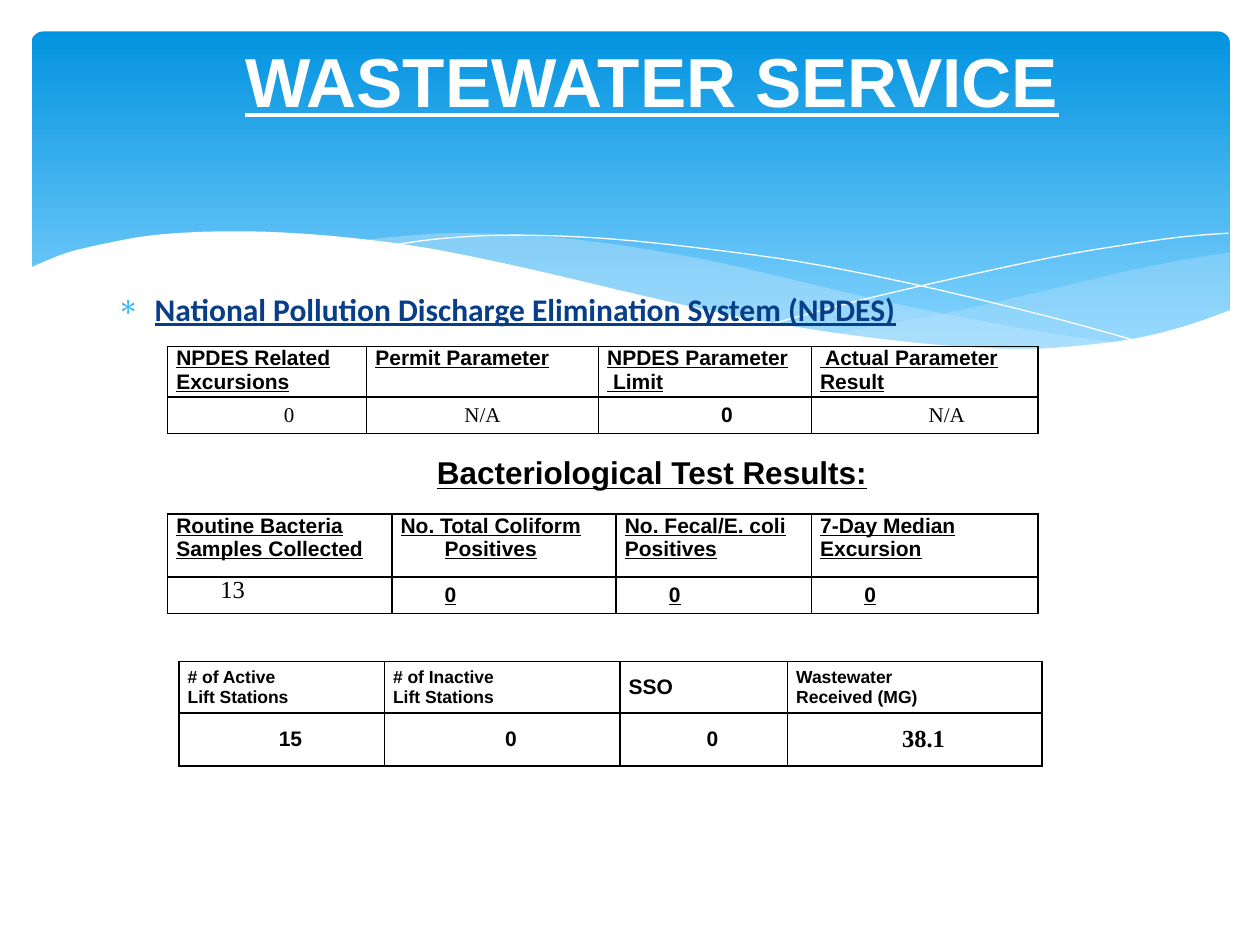
"""Build the wastewater service slide with its wave banner and three result tables."""
from lxml import etree
from pptx import Presentation
from pptx.dml.color import RGBColor
from pptx.enum.shapes import MSO_SHAPE
from pptx.enum.text import MSO_ANCHOR, PP_ALIGN
from pptx.oxml.ns import qn
from pptx.util import Cm, Pt

LEFT, CENTER = PP_ALIGN.LEFT, PP_ALIGN.CENTER
TOP, MIDDLE = MSO_ANCHOR.TOP, MSO_ANCHOR.MIDDLE
ROUNDED = MSO_SHAPE.ROUNDED_RECTANGLE
ARIAL, TIMES, CALIBRI = "Arial", "Times New Roman", "Calibri"

COLORS = {"white": "FFFFFF", "black": "000000", "navy": "073E87", "bullet": "31B6FD",
          "sky": "0293E0", "pale": "83D3FE", "wave": "C6E7FC"}

TITLE = "WASTEWATER SERVICE"
SUBJECT = "National Pollution Discharge Elimination System (NPDES)"
HEADING = "Bacteriological Test Results:"

STYLES = {
    "head": dict(under=True, anchor=TOP),
    "step": dict(under=True, anchor=TOP, indent=0.35),
    "plain": dict(font=TIMES, bold=False, align=CENTER, indent=0.35),
    "mid": dict(font=TIMES, bold=False, align=CENTER),
    "strong": dict(align=CENTER, indent=0.35),
    "count": dict(size=14, font=TIMES, bold=False, anchor=TOP, indent=0.35),
    "zero": dict(under=True, indent=0.35),
    "small": dict(size=10),
    "label": dict(),
    "total": dict(align=CENTER, margin=0.14),
    "volume": dict(size=14, font=TIMES, align=CENTER, margin=0.14),
}

TABLES = [
    dict(at=(1.33, 2.75), cols=(1.58, 1.84, 1.69, 1.8), rows=(0.37, 0.29), cells=[
        [("NPDES Related\nExcursions", "head"), ("Permit Parameter", "head"),
         ("NPDES Parameter\n Limit", "head"), (" Actual Parameter\nResult", "head")],
        [("0", "plain"), ("N/A", "mid"), ("0", "strong"), ("N/A", "plain")]]),
    dict(at=(1.33, 4.08), cols=(1.78, 1.78, 1.55, 1.8), rows=(0.5, 0.29), cells=[
        [("Routine Bacteria\nSamples Collected", "head"),
         ("No. Total Coliform\nPositives", "step"),
         ("No. Fecal/E. coli\nPositives", "head"), ("7-Day Median\nExcursion", "head")],
        [("13", "count"), ("0", "zero"), ("0", "zero"), ("0", "zero")]]),
    dict(at=(1.42, 5.25), cols=(1.63, 1.87, 1.33, 2.02), rows=(0.41, 0.42), cells=[
        [("# of Active\nLift Stations", "small"), ("# of Inactive\nLift Stations", "small"),
         ("SSO", "label"), ("Wastewater\nReceived (MG)", "small")],
        [("15", "total"), ("0", "total"), ("0", "total"), ("38.1", "volume")]]),
]

WAVES = [
    dict(fill="wave", alpha=29, edges=[
        [(9.76, 2), (9.35, 2.07), (8.91, 2.16), (8.32, 2.3), (7.53, 2.48), (6.61, 2.65)],
        [(6.61, 2.65), (7.05, 2.71), (7.57, 2.76), (8.14, 2.78), (8.63, 2.75),
         (9.05, 2.69), (9.42, 2.59), (9.76, 2.47)]]),
    dict(fill="wave", alpha=40, edges=[
        [(8.93, 2.73), (8.37, 2.65), (7.75, 2.54), (7.06, 2.4), (6.29, 2.22), (5.69, 2.08),
         (5.14, 1.98), (4.65, 1.91), (4.2, 1.87), (3.61, 1.85), (3.13, 1.88), (2.86, 1.91)],
        [(2.86, 1.91), (3.42, 1.99), (4.04, 2.11), (4.49, 2.22), (5.3, 2.4), (6.01, 2.55),
         (6.65, 2.66), (7.22, 2.74), (7.73, 2.77), (8.28, 2.78), (8.93, 2.73)]]),
    dict(line="white", edges=[
        [(3.09, 1.95), (3.44, 1.9), (3.87, 1.87), (4.33, 1.87), (4.89, 1.9), (5.56, 1.97),
         (6.36, 2.08), (7.27, 2.26), (8.31, 2.51), (9.07, 2.72)]]),
    dict(line="white", edges=[
        [(6.13, 2.57), (6.72, 2.41), (7.48, 2.23), (8.36, 2.04), (8.95, 1.94),
         (9.38, 1.88), (9.75, 1.85)]]),
    dict(fill="white", alpha=100, edges=[
        [(9.77, 2.46), (9.4, 2.59), (8.99, 2.69), (8.5, 2.75), (8.09, 2.77), (7.61, 2.75),
         (7.08, 2.7), (6.48, 2.62), (5.79, 2.5), (5.03, 2.33), (4.18, 2.13), (3.4, 1.97),
         (2.71, 1.88), (2.11, 1.84), (1.61, 1.84), (1.19, 1.87), (0.85, 1.93),
         (0.52, 2.01), (0.23, 2.13)],
        [(0.23, 3.29), (9.77, 3.29)]]),
]


def inch(n):
    return Cm(n * 2.54)


def rgb(name):
    return RGBColor.from_string(COLORS[name])


def smooth(knots, steps=5):
    """Return points on a Catmull-Rom curve through the knots."""
    ends = [knots[0], *knots, knots[-1]]
    points = [knots[0]]
    for a, b, c, d in zip(ends, ends[1:], ends[2:], ends[3:]):
        for t in (i / steps for i in range(1, steps + 1)):
            points.append(tuple(
                (2 * q + (r - p) * t + (2 * p - 5 * q + 4 * r - s) * t ** 2
                 + (3 * q - p - 3 * r + s) * t ** 3) / 2
                for p, q, r, s in zip(a, b, c, d)))
    return points


def add_wave(slide, edges, fill=None, alpha=100, line=None):
    points = [(inch(x), inch(y)) for edge in edges for x, y in smooth(edge)]
    fb = slide.shapes.build_freeform(*points[0])
    fb.add_line_segments(points[1:], close=fill is not None)
    s = fb.convert_to_shape()
    s.shadow.inherit = False
    if fill:
        s.fill.solid()
        s.fill.fore_color.rgb = rgb(fill)
        clr = s.fill._xPr.find(".//" + qn("a:srgbClr"))
        etree.SubElement(clr, qn("a:alpha"), val=str(alpha * 1000))
        s.line.fill.background()
    else:
        s.fill.background()
        s.line.color.rgb = rgb(line)
        s.line.width = Pt(0)


def add_banner(slide):
    s = slide.shapes.add_shape(ROUNDED, *map(inch, (0.25, 0.25, 9.51, 2.7)))
    s.adjustments[0] = 0.034
    s.shadow.inherit = False
    s.line.fill.background()
    s.fill.gradient()
    s.fill.gradient_angle = 270
    for stop, name, position in zip(s.fill.gradient_stops, ("sky", "pale"), (0, 0.9)):
        stop.color.rgb = rgb(name)
        stop.position = position


def write(tf, text, size=12, font=ARIAL, color="black", bold=True, under=False,
          align=LEFT, margin=0, indent=0):
    """Write one paragraph per line; the indent goes to the last one."""
    lines = text.split("\n")
    for i, line in enumerate(lines):
        p = tf.add_paragraph() if i else tf.paragraphs[0]
        p.text = line
        p.alignment = align
        f = p.font
        f.size, f.name, f.bold, f.underline = Pt(size), font, bold, under
        f.color.rgb = rgb(color)
        pPr = p._p.get_or_add_pPr()
        pPr.set("marL", str(inch(margin)))
        pPr.set("indent", str(inch(indent if i == len(lines) - 1 else 0)))


def add_text(slide, at, text, anchor=TOP, wrap=True, **style):
    tf = slide.shapes.add_textbox(*map(inch, at)).text_frame
    tf.word_wrap = wrap
    tf.vertical_anchor = anchor
    write(tf, text, under=True, **style)
    return tf


def add_bullet(p, char, color):
    pPr = p._p.get_or_add_pPr()
    bullet = etree.Element(qn("a:buClr"))
    etree.SubElement(bullet, qn("a:srgbClr"), val=COLORS[color])
    mark = etree.Element(qn("a:buChar"), char=char)
    pPr.insert(0, bullet)
    pPr.insert(1, mark)


def add_borders(cell):
    tcPr = cell._tc.get_or_add_tcPr()
    for i, side in enumerate("LRTB"):
        ln = etree.Element(qn("a:ln" + side), w=str(Pt(1)))
        fill = etree.SubElement(ln, qn("a:solidFill"))
        etree.SubElement(fill, qn("a:srgbClr"), val=COLORS["black"])
        tcPr.insert(i, ln)


def add_grid(slide, at, cols, rows, cells):
    box = map(inch, (*at, sum(cols), sum(rows)))
    table = slide.shapes.add_table(len(rows), len(cols), *box).table
    table.first_row = table.horz_banding = False
    for col, width in zip(table.columns, cols):
        col.width = inch(width)
    for row, height, contents in zip(table.rows, rows, cells):
        row.height = inch(height)
        for cell, (text, name) in zip(row.cells, contents):
            style = dict(STYLES[name])
            cell.vertical_anchor = style.pop("anchor", MIDDLE)
            cell.margin_left = cell.margin_right = inch(0.07)
            cell.margin_top = cell.margin_bottom = 0
            cell.fill.background()
            add_borders(cell)
            write(cell.text_frame, text, **style)


def main():
    prs = Presentation()
    prs.slide_width, prs.slide_height = inch(10), inch(7.5)
    slide = prs.slides.add_slide(prs.slide_layouts[6])
    add_banner(slide)
    for wave in WAVES:
        add_wave(slide, **wave)
    tf = add_text(slide, (0.83, 2.25, 8.1, 0.41), SUBJECT, size=18, font=CALIBRI,
                  color="navy", margin=0.3, indent=-0.3)
    add_bullet(tf.paragraphs[0], "∗", "bullet")
    tf = add_text(slide, (0.5, 0.37, 9, 1.13), TITLE, anchor=MIDDLE, size=39.6,
                  color="white", align=CENTER, margin=0.35)
    tf.margin_top, tf.margin_bottom = 0, inch(0.6)
    add_text(slide, (3, 3.55, 4, 0.4), HEADING, wrap=False, size=18,
             align=CENTER, indent=0.35)
    for table in TABLES:
        add_grid(slide, **table)
    prs.save("out.pptx")


if __name__ == "__main__":
    main()
